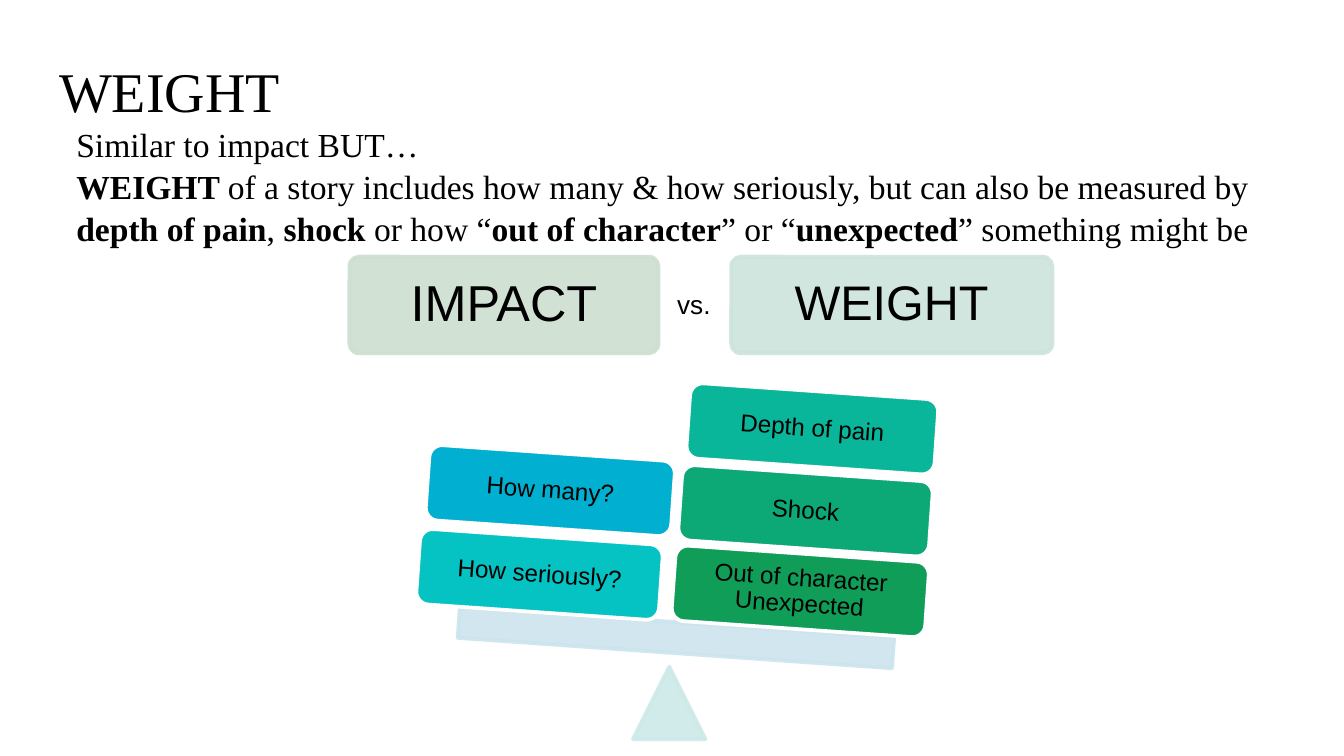
import pptx
import pptx.util
import pptx.dml.color
import pptx.enum.shapes
import pptx.enum.text
import pptx.oxml
import pptx.oxml.ns

Pt = pptx.util.Pt
Kind = pptx.enum.shapes.MSO_SHAPE
Align = pptx.enum.text.PP_ALIGN
Anchor = pptx.enum.text.MSO_ANCHOR
SERIF, SANS = "Times New Roman", "Arial"
TILT = 4


def paint(fmt, tone, alpha=100):
    """Give a fill a solid colour, see-through when alpha is below 100."""
    fmt.solid()
    fmt.fore_color.rgb = pptx.dml.color.RGBColor.from_string(tone)
    if alpha < 100:
        # python-pptx has no alpha setting
        for node in fmt._xPr.iter(pptx.oxml.ns.qn("a:srgbClr")):
            mark = pptx.oxml.parse_xml(
                '<a:alpha xmlns:a="http://schemas.openxmlformats.org/'
                'drawingml/2006/main" val="%d"/>' % (alpha * 1000))
            node.append(mark)


def write(frame, text, size=18, font=SANS, align=Align.LEFT, anchor=Anchor.TOP,
          inset=(7.2, 3.6, 7.2, 3.6), space=1, indent=0, wrap=True):
    """Write lines into a frame; ** switches bold on and off."""
    frame.word_wrap = wrap
    frame.auto_size = pptx.enum.text.MSO_AUTO_SIZE.NONE
    frame.vertical_anchor = anchor
    (frame.margin_left, frame.margin_top,
     frame.margin_right, frame.margin_bottom) = map(Pt, inset)
    for row, line in enumerate(text.split("\n")):
        para = frame.add_paragraph() if row else frame.paragraphs[0]
        para.alignment = align
        para.line_spacing = space
        if indent:
            props = para._p.get_or_add_pPr()
            props.set("marL", str(Pt(indent)))
            props.set("indent", "0")
        for turn, part in enumerate(line.split("**")):
            if part:
                run = para.add_run()
                run.text = part
                run.font.name = font
                run.font.size = Pt(size)
                run.font.bold = turn % 2 == 1
                paint(run.font.fill, "000000")


def block(slide, kind, box, tone, edge=None, alpha=100, turn=0, text="",
          size=13, inset=3.6, curve=None):
    """Draw one filled shape with centred text."""
    part = slide.shapes.add_shape(kind, *map(Pt, box))
    part.shadow.inherit = False
    part.rotation = turn
    if curve:
        part.adjustments[0] = curve
    paint(part.fill, tone, alpha)
    paint(part.line.fill, edge or tone, alpha)
    part.line.width = Pt(2)
    if text:
        write(part.text_frame, text, size=size, align=Align.CENTER,
              anchor=Anchor.MIDDLE, inset=(inset,) * 4, space=0.9)


def heading(slide, box):
    title = slide.shapes.title
    title.left, title.top, title.width, title.height = map(Pt, box)
    write(title.text_frame, "WEIGHT", size=30, font=SERIF,
          inset=(7.2, 11, 7.2, 0))


def intro(slide, box):
    note = slide.shapes.add_textbox(*map(Pt, box))
    write(note.text_frame,
          "Similar to impact BUT…\n"
          "**WEIGHT **of a story includes how many & how seriously, but can "
          "also be measured by **depth of pain**, **shock** or how “**out of "
          "character**” or “**unexpected**” something might be",
          font=SERIF, space=1.04, indent=18)


def versus(slide, box):
    """Two headers with a small word between them."""
    left, top, width, height = box
    wide, gap = 165.6, 38.9
    start = left + wide + gap
    heads = [("IMPACT", left, wide, "CCDFD1", 27),
             ("WEIGHT", start, left + width - start, "CCE4DB", 26)]
    for text, x, w, tone, size in heads:
        block(slide, Kind.ROUNDED_RECTANGLE, (x, top, w, height), tone,
              alpha=90, text=text, size=size, inset=8, curve=0.1)
    word = slide.shapes.add_textbox(Pt(left + wide + 2.9), Pt(top + 13.7),
                                    Pt(33.1), Pt(24.5))
    write(word.text_frame, "vs.", size=14)


def scale(slide, box):
    """Tilted balance with a pile of blocks on each side."""
    left, top, width, height = box
    # Stand and beam
    block(slide, Kind.ISOSCELES_TRIANGLE,
          (left + 115.2, top + height - 38.9, 38.9, 38.9), "CCE9E8", alpha=90)
    block(slide, Kind.RECTANGLE, (left + 21.6, top + 123.8, 233.3, 16.6),
          "CCE4EE", alpha=90, turn=TILT)
    # Blocks, from the beam upwards
    piles = [
        ("Out of character Unexpected", 136.8, 87.1, 136.1, "0F9D58"),
        ("Shock", 140.4, 43.9, 134.6, "0CA977"),
        ("Depth of pain", 144.7, 0, 133.2, "09B69A"),
        ("How seriously?", 0, 78, 130.3, "05C3C3"),
        ("How many?", 5, 33.1, 131.8, "01AFD1"),
    ]
    for text, x, y, w, tone in piles:
        block(slide, Kind.ROUNDED_RECTANGLE, (left + x, top + y, w, 40.5),
              tone, edge="FFFFFF", turn=TILT, text=text)


def main():
    deck = pptx.Presentation()
    deck.slide_width, deck.slide_height = Pt(720), Pt(405)
    slide = deck.slides.add_slide(deck.slide_layouts.get_by_name("Title Only"))
    heading(slide, (24.5, 19.4, 671, 42.5))
    versus(slide, (187.2, 137.5, 376.6, 51.8))
    scale(slide, (223.9, 209.5, 278, 186.5))
    intro(slide, (15.8, 61.9, 684.7, 72.7))
    deck.save("out.pptx")


if __name__ == "__main__":
    main()
